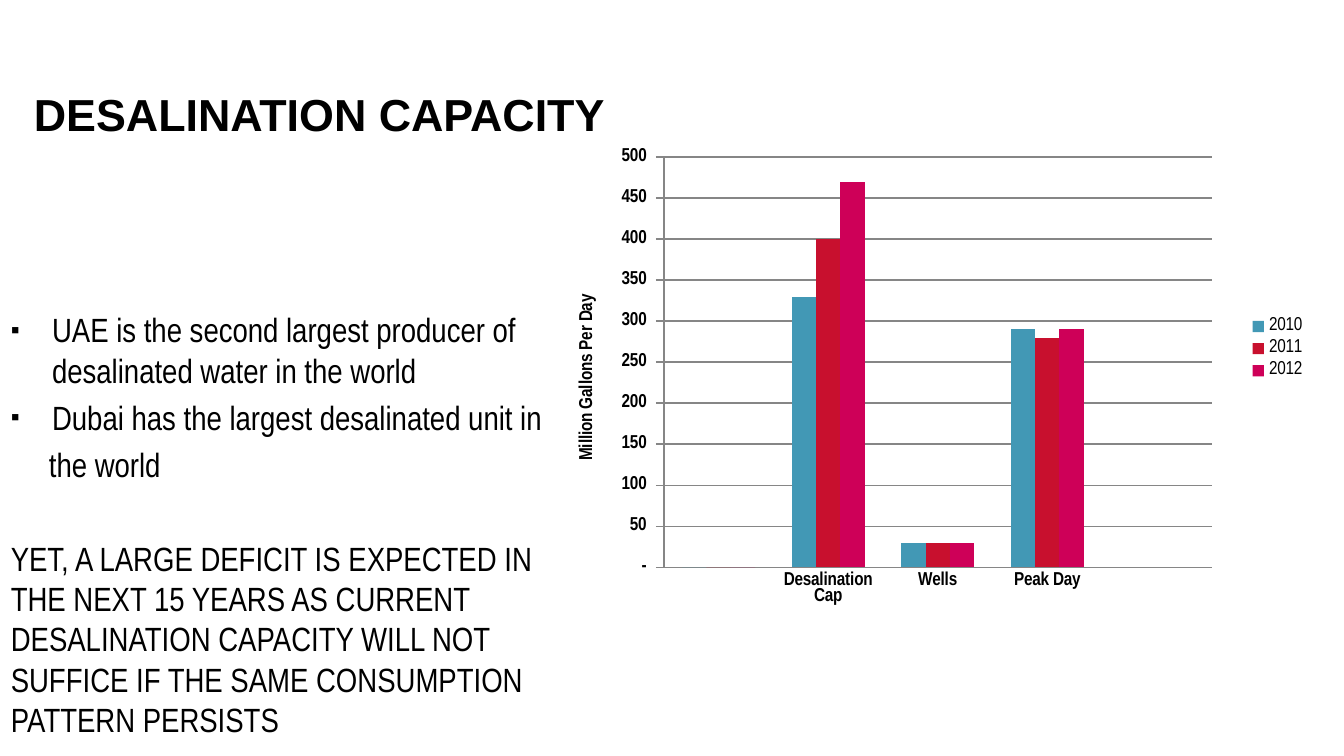
import pptx
import pptx.chart.data
import pptx.dml.color
import pptx.enum.chart
import pptx.enum.text
import pptx.util
from lxml import etree
from pptx.oxml.ns import qn

Cm = pptx.util.Cm
Pt = pptx.util.Pt
BLACK = "000000"
GREY = "868686"
NARROW = "Arial Narrow"


def tint(code):
    return pptx.dml.color.RGBColor.from_string(code)


def apply(item, style):
    for key, value in style.items():
        setattr(item, key, value)


class Deck:
    def __init__(self, wide, high):
        self.show = pptx.Presentation()
        apply(self.show, {"slide_width": Cm(wide), "slide_height": Cm(high)})
        self.slide = self.show.slides.add_slide(self.show.slide_layouts[1])
        self.bold = {"name": NARROW, "size": Pt(10), "bold": True}
        self.plain = {"name": NARROW, "size": Pt(10), "bold": False}

    def place(self, shape, box):
        apply(shape, dict(zip(("left", "top", "width", "height"), map(Cm, box))))

    def font(self, font, style):
        apply(font, style)
        font.color.rgb = tint(BLACK)

    def line(self, line):
        line.color.rgb = tint(GREY)
        line.width = Pt(0.75)

    def title(self, text, box):
        shape = self.slide.shapes.title
        self.place(shape, box)
        frame = shape.text_frame
        frame.text = text
        apply(frame, {
            "margin_left": Cm(0.64), "margin_right": Cm(0.64),
            "vertical_anchor": pptx.enum.text.MSO_ANCHOR.BOTTOM,
            "auto_size": pptx.enum.text.MSO_AUTO_SIZE.NONE,
            "word_wrap": True,
        })
        para = frame.paragraphs[0]
        apply(para, {"alignment": pptx.enum.text.PP_ALIGN.LEFT, "line_spacing": Pt(26)})
        self.font(para.runs[0].font, {"name": "Arial", "size": Pt(24), "bold": True})

    def body(self, items, box):
        shape = self.slide.placeholders[1]
        self.place(shape, box)
        frame = shape.text_frame
        apply(frame, {
            "vertical_anchor": pptx.enum.text.MSO_ANCHOR.TOP,
            "auto_size": pptx.enum.text.MSO_AUTO_SIZE.NONE,
            "word_wrap": True,
        })
        frame.text = "\n".join(item[0] for item in items)
        for para, (_, mark, inset, gap) in zip(frame.paragraphs, items):
            para.space_before = Pt(gap)
            self.font(para.runs[0].font, {"name": NARROW, "size": Pt(18)})
            self.bullet(para, mark, inset)

    def bullet(self, para, mark, inset):
        props = para._p.get_or_add_pPr()
        props.set("marL", str(Cm(inset)))
        props.set("indent", str(-Cm(inset) if mark else 0))
        if mark:
            etree.SubElement(props, qn("a:buSzPct"), val="75000")
            etree.SubElement(props, qn("a:buFont"), typeface="Arial")
            etree.SubElement(props, qn("a:buChar"), char=mark)
        else:
            etree.SubElement(props, qn("a:buNone"))

    def chart(self, names, series, label, box, area):
        data = pptx.chart.data.CategoryChartData()
        data.categories = names
        for name, _, values in series:
            data.add_series(name, values)
        kind = pptx.enum.chart.XL_CHART_TYPE.COLUMN_CLUSTERED
        chart = self.slide.shapes.add_chart(kind, *map(Cm, box), data).chart
        apply(chart, {"has_title": False, "has_legend": True})
        self.font(chart.font, self.plain)
        apply(chart.legend, {
            "position": pptx.enum.chart.XL_LEGEND_POSITION.RIGHT,
            "include_in_layout": False,
        })
        self.font(chart.legend.font, self.plain)
        plot = chart.plots[0]
        apply(plot, {"gap_width": 150, "overlap": 0, "vary_by_categories": False})
        for bar, (_, color, _) in zip(plot.series, series):
            bar.format.fill.solid()
            bar.format.fill.fore_color.rgb = tint(color)
        self.axes(chart, label)
        self.layout(chart, area)

    def axes(self, chart, label):
        tick = pptx.enum.chart.XL_TICK_MARK
        cat, val = chart.category_axis, chart.value_axis
        apply(cat, {"major_tick_mark": tick.NONE, "minor_tick_mark": tick.NONE})
        apply(val, {
            "major_tick_mark": tick.OUTSIDE, "minor_tick_mark": tick.NONE,
            "minimum_scale": 0, "maximum_scale": 500, "major_unit": 50,
            "has_major_gridlines": True,
        })
        for axis in (cat, val):
            self.font(axis.tick_labels.font, self.bold)
            self.line(axis.format.line)
        self.line(val.major_gridlines.format.line)
        apply(val.tick_labels, {
            "number_format": '_(* #,##0_);_(* \\(#,##0\\);_(* "-"_);_(@_)',
            "number_format_is_linked": False,
        })
        frame = val.axis_title.text_frame
        frame.text = label
        self.font(frame.paragraphs[0].runs[0].font, self.bold)

    def layout(self, chart, area):
        plot = chart._chartSpace.find(".//" + qn("c:plotArea"))
        for old in plot.findall(qn("c:layout")):
            plot.remove(old)
        outer = etree.Element(qn("c:layout"))
        inner = etree.SubElement(outer, qn("c:manualLayout"))
        parts = {"layoutTarget": "inner", "xMode": "edge", "yMode": "edge"}
        parts.update(zip("xywh", area))
        for key, value in parts.items():
            etree.SubElement(inner, qn("c:" + key), val=str(value))
        plot.insert(0, outer)


def main():
    deck = Deck(25.4, 14.29)
    deck.title("DESALINATION CAPACITY", (0, 0.38, 13.77, 2.41))
    deck.body([
        ("UAE is the second largest producer of desalinated water in the world", "▪", 0.78, 3.6),
        ("Dubai has the largest desalinated unit in", "▪", 0.78, 3.6),
        ("the world", "", 0.72, 3.6),
        ("YET, A LARGE DEFICIT IS EXPECTED IN THE NEXT 15 YEARS AS CURRENT "
         "DESALINATION CAPACITY WILL NOT SUFFICE IF THE SAME CONSUMPTION "
         "PATTERN PERSISTS", "", 0, 28.8),
    ], (-0.05, 5.72, 11.28, 8.4))
    deck.chart(
        ["", "Desalination Cap", "Wells", "Peak Day", ""],
        [
            ("2010", "4298B5", (0, 330, 30, 290, None)),
            ("2011", "C8102E", (0, 400, 30, 280, None)),
            ("2012", "CE0058", (0, 470, 30, 290, None)),
        ],
        "Million Gallons Per Day",
        (10.36, 1.42, 14.58, 10.34),
        (0.15, 0.15, 0.71, 0.75),
    )
    deck.show.save("out.pptx")


if __name__ == "__main__":
    main()
